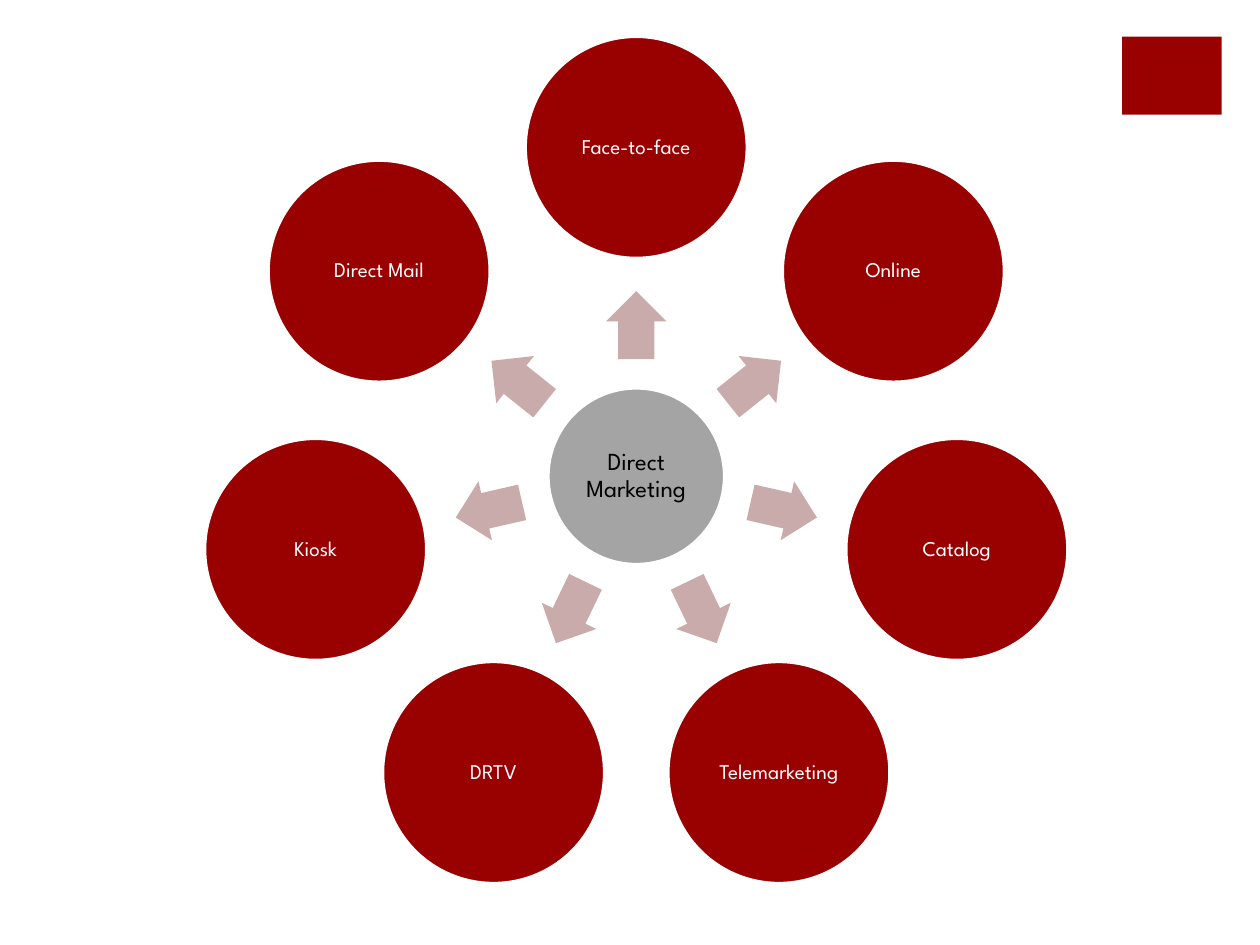
from math import cos, radians, sin

from pptx import Presentation
from pptx.dml.color import RGBColor
from pptx.enum.shapes import MSO_SHAPE
from pptx.enum.text import MSO_ANCHOR, PP_ALIGN
from pptx.util import Inches, Pt

HUB = "Direct Marketing"
CHANNELS = [
    "Face-to-face",
    "Online",
    "Catalog",
    "Telemarketing",
    "DRTV",
    "Kiosk",
    "Direct Mail",
]

RED = RGBColor(0x99, 0x00, 0x00)
GRAY = RGBColor(0xA4, 0xA4, 0xA4)
PINK = RGBColor(0xCA, 0xAB, 0xAB)
WHITE = RGBColor(0xFF, 0xFF, 0xFF)
BLACK = RGBColor(0x00, 0x00, 0x00)
FONT = "League Spartan"

OVAL = MSO_SHAPE.OVAL
ARROW = MSO_SHAPE.RIGHT_ARROW
RECT = MSO_SHAPE.RECTANGLE
CENTER = PP_ALIGN.CENTER
MIDDLE = MSO_ANCHOR.MIDDLE

MID_X, MID_Y = 5.05, 3.78
RING, GAP = 2.61, 1.2
HUB_SIZE, DISC_SIZE = 1.41, 1.77
ARROW_W, ARROW_H = 0.54, 0.48

prs = Presentation()
prs.slide_width, prs.slide_height = Inches(10), Inches(7.5)
slide = prs.slides.add_slide(prs.slide_layouts[6])


def place(kind, x, y, width, height, fill):
    shape = slide.shapes.add_shape(
        kind, Inches(x - width / 2), Inches(y - height / 2),
        Inches(width), Inches(height))
    shape.shadow.inherit = False
    shape.fill.solid()
    shape.fill.fore_color.rgb = fill
    shape.line.fill.background()
    return shape


def write(shape, text, size=12, color=WHITE):
    frame = shape.text_frame
    frame.word_wrap = True
    frame.vertical_anchor = MIDDLE
    frame.margin_left = frame.margin_right = Inches(0.02)
    frame.margin_top = frame.margin_bottom = Inches(0.02)
    para = frame.paragraphs[0]
    para.alignment = CENTER
    para.line_spacing = 0.9
    run = para.add_run()
    run.text = text
    run.font.name = FONT
    run.font.size = Pt(size)
    run.font.color.rgb = color


def disc(text, x, y, width, fill, **style):
    shape = place(OVAL, x, y, width, width, fill)
    shape.line.color.rgb = WHITE
    shape.line.width = Pt(2.5)
    write(shape, text, **style)


def polar(radius, angle):
    turn = radians(angle)
    return MID_X + radius * cos(turn), MID_Y + radius * sin(turn)


place(RECT, 9.3, 0.6, 0.79, 0.62, RED)
disc(HUB, MID_X, MID_Y, HUB_SIZE, GRAY, size=14, color=BLACK)

for index, name in enumerate(CHANNELS):
    angle = index * 360 / len(CHANNELS) - 90
    arrow = place(ARROW, *polar(GAP, angle), ARROW_W, ARROW_H, PINK)
    arrow.adjustments[0] = 0.6
    arrow.adjustments[1] = 0.5
    arrow.rotation = angle % 360
    disc(name, *polar(RING, angle), DISC_SIZE, RED)

prs.save("out.pptx")
